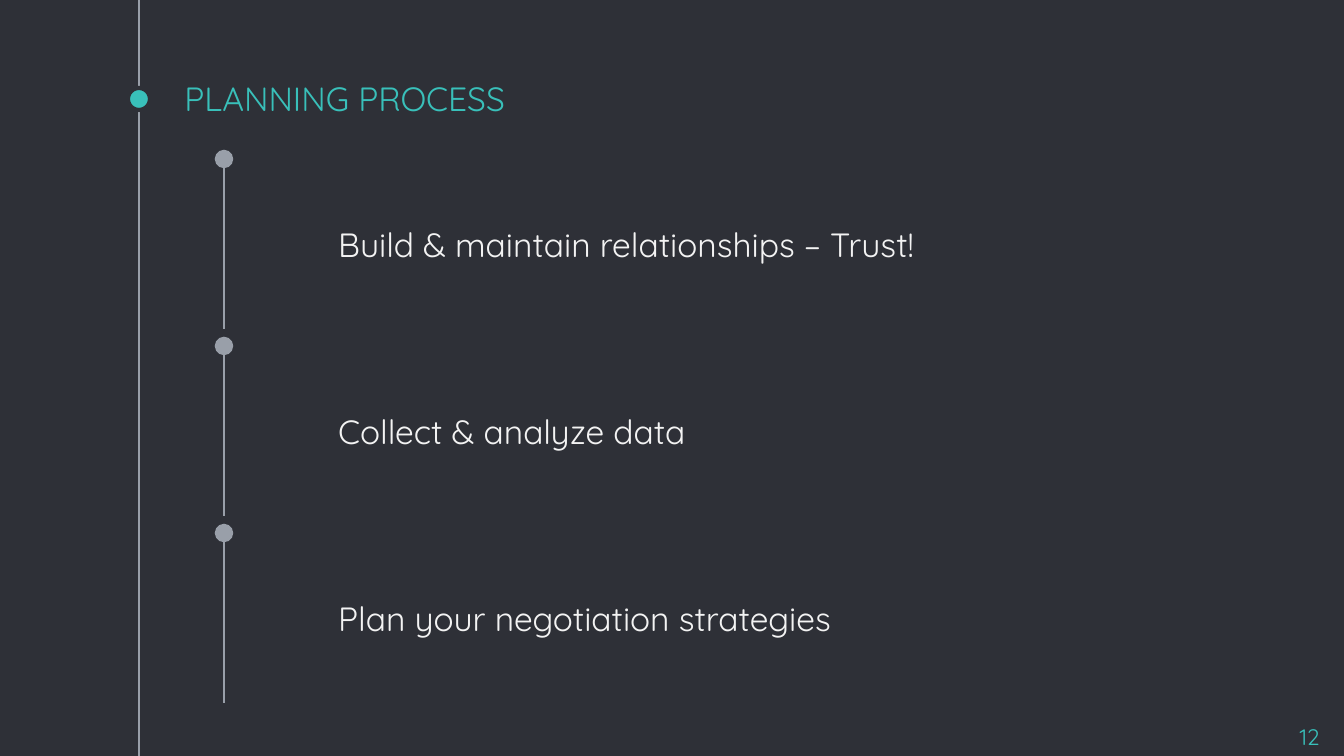
from lxml.etree import SubElement
from pptx import Presentation
from pptx.dml.color import RGBColor
from pptx.enum.shapes import MSO_CONNECTOR, MSO_SHAPE
from pptx.enum.text import MSO_ANCHOR, MSO_AUTO_SIZE, PP_ALIGN
from pptx.oxml.ns import qn
from pptx.util import Emu, Inches, Pt

WIDE, HIGH = 1344, 756
SCALE = Inches(10) / WIDE


class Theme:
    back = RGBColor.from_string("2E3037")
    line = RGBColor.from_string("999FA9")
    main = RGBColor.from_string("39C0BA")
    text = RGBColor.from_string("F3F3F3")
    font = "Quicksand"
    body = Pt(18)
    small = Pt(12)
    thin = Pt(0.75)
    ring = Pt(2.25)


STEPS = [  # wording, width of its box
    ("Build & maintain relationships – Trust!", 722),
    ("Collect & analyze data", 754),
    ("Plan your negotiation strategies", 823),
]
STEP_X, STEP_Y, PITCH, LENGTH = 224, 159, 187, 170
TEXT_X, TEXT_DROP = 325, 52


def px(*sizes):
    return [Emu(round(size * SCALE)) for size in sizes]


def assign(item, values):
    for name, value in values.items():
        setattr(item, name, value)


def write(shape, box, text, size, color, align=PP_ALIGN.LEFT,
          anchor=MSO_ANCHOR.TOP):
    """Place a text shape and give it one formatted line."""
    assign(shape, dict(zip(("left", "top", "width", "height"), px(*box))))
    frame = shape.text_frame
    inset = Inches(0.1)
    assign(frame, {
        "text": text, "word_wrap": True, "auto_size": MSO_AUTO_SIZE.NONE,
        "vertical_anchor": anchor, "margin_left": inset, "margin_top": inset,
        "margin_right": inset, "margin_bottom": inset,
    })
    line = frame.paragraphs[0]
    line.alignment = align
    font = line.runs[0].font
    assign(font, {"name": Theme.font, "size": size, "bold": False})
    font.color.rgb = color


def add_text(slide, box, *args, **style):
    write(slide.shapes.add_textbox(*px(*box)), box, *args, **style)


def add_rule(slide, x, start, end, dot=False):
    """Draw an upright line, with a round end if dot is set."""
    rule = slide.shapes.add_connector(
        MSO_CONNECTOR.STRAIGHT, *px(x, start, x, end))
    rule.line.width = Theme.thin
    rule.line.color.rgb = Theme.line
    if dot:
        SubElement(rule.line._ln, qn("a:tailEnd"), type="oval", w="lg", len="lg")
    SubElement(rule._element.spPr, qn("a:effectLst"))


def add_mark(slide, box):
    mark = slide.shapes.add_shape(MSO_SHAPE.OVAL, *px(*box))
    mark.shadow.inherit = False
    mark.fill.solid()
    mark.fill.fore_color.rgb = Theme.main
    mark.line.color.rgb = Theme.back
    mark.line.width = Theme.ring


def add_step(slide, index, text, width):
    top = STEP_Y + index * PITCH
    add_rule(slide, STEP_X, top + LENGTH, top, dot=True)
    add_text(slide, (TEXT_X, top + TEXT_DROP, width, 42), text,
             Theme.body, Theme.text)


def main():
    deck = Presentation()
    deck.slide_width, deck.slide_height = px(WIDE, HIGH)
    slide = deck.slides.add_slide(deck.slide_layouts[5])
    slide.background.fill.solid()
    slide.background.fill.fore_color.rgb = Theme.back

    add_rule(slide, 139, 0, HIGH)
    add_mark(slide, (128, 88, 22, 22))
    write(slide.shapes.title, (171, 81, 1008, 51), "PLANNING PROCESS",
          Theme.body, Theme.main, anchor=MSO_ANCHOR.BOTTOM)
    for index, (text, width) in enumerate(STEPS):
        add_step(slide, index, text, width)
    add_text(slide, (1253, 710, 80, 46), "12", Theme.small, Theme.main,
             align=PP_ALIGN.RIGHT)
    deck.save("out.pptx")


if __name__ == "__main__":
    main()
